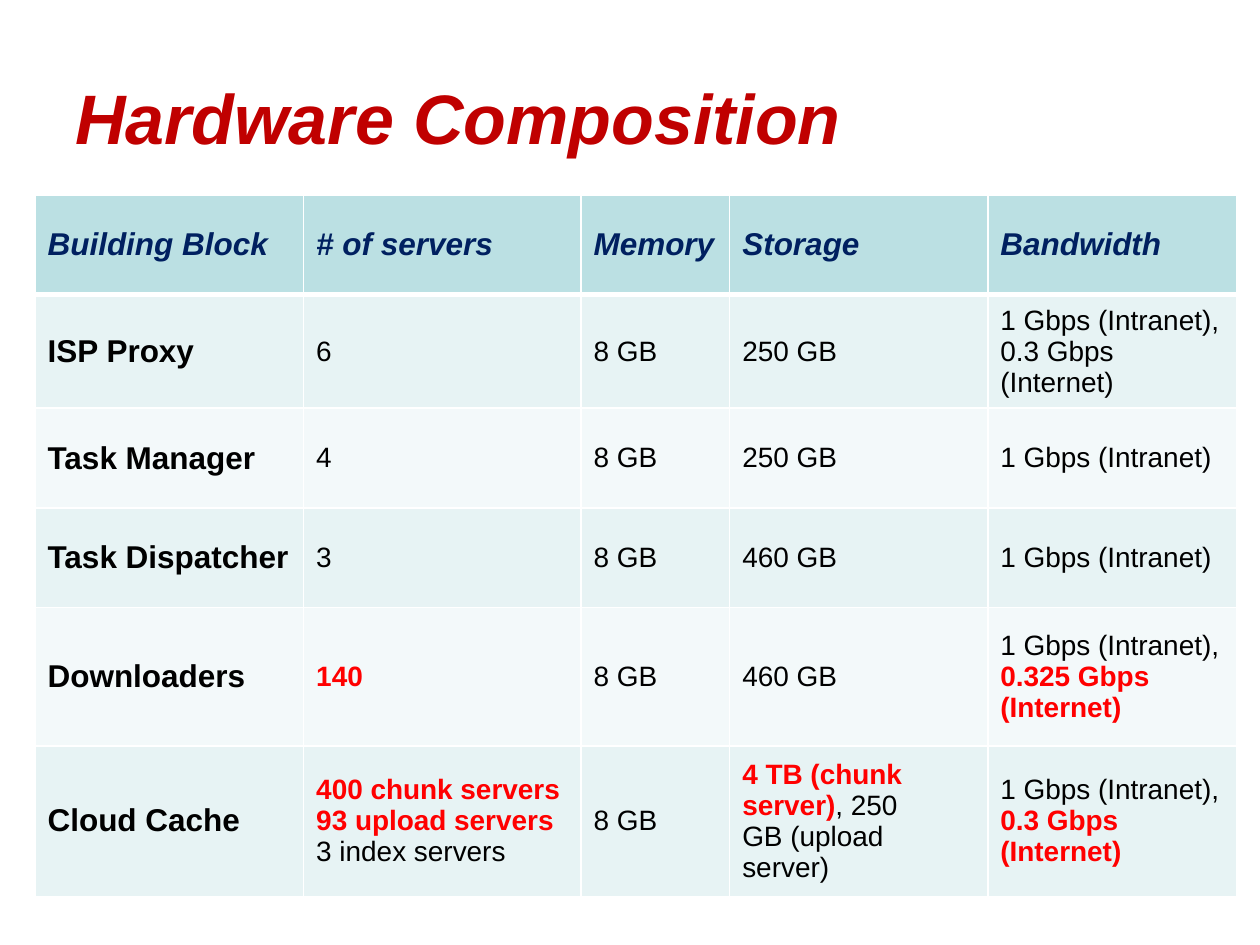
from lxml import etree
from pptx import Presentation
from pptx.dml.color import RGBColor
from pptx.enum.text import MSO_ANCHOR
from pptx.oxml.ns import qn
from pptx.util import Pt

MIDDLE = MSO_ANCHOR.MIDDLE
FONT = "Arial"
WHITE, BLACK, RED = "FFFFFF", "000000", "FF0000"
TITLE_RED, NAVY = "C00000", "002060"
HEADER_FILL, BAND_FILLS = "BBE0E3", ("E7F3F4", "F3F9FA")

COL_WIDTHS = (153.5, 158.5, 85, 147.5, 142)
ROW_HEIGHTS = (57, 61, 57, 57, 79, 86)
HEADERS = ("Building Block", "# of servers", "Memory", "Storage", "Bandwidth")
# Text between bars is highlighted.
ROWS = (
    ("ISP Proxy", "6", "8 GB", "250 GB", "1 Gbps (Intranet), 0.3 Gbps (Internet)"),
    ("Task Manager", "4", "8 GB", "250 GB", "1 Gbps (Intranet)"),
    ("Task Dispatcher", "3", "8 GB", "460 GB", "1 Gbps (Intranet)"),
    ("Downloaders", "|140|", "8 GB", "460 GB",
     "1 Gbps (Intranet), |0.325 Gbps (Internet)|"),
    ("Cloud Cache", "|400 chunk servers|\n|93 upload servers|\n3 index servers",
     "8 GB", "|4 TB (chunk server)|, 250\nGB (upload server)",
     "1 Gbps (Intranet), |0.3 Gbps (Internet)|"),
)


def rgb(color):
    return RGBColor.from_string(color)


def write_text(tf, text, size=16, color=BLACK, bold=False, italic=False):
    tf.word_wrap = True
    for i, line in enumerate(text.split("\n")):
        p = tf.paragraphs[0] if i == 0 else tf.add_paragraph()
        for j, part in enumerate(line.split("|")):
            if not part:
                continue
            marked = j % 2 == 1
            r = p.add_run()
            r.text = part
            r.font.name = FONT
            r.font.size = Pt(size)
            r.font.bold = bold or marked
            r.font.italic = italic
            r.font.color.rgb = rgb(RED if marked else color)


def set_borders(cell, bottom=1):
    tcPr = cell._tc.get_or_add_tcPr()
    widths = {"a:lnL": 1, "a:lnR": 1, "a:lnT": 1, "a:lnB": bottom}
    for i, (tag, width) in enumerate(widths.items()):
        ln = etree.Element(qn(tag), w=str(Pt(width)))
        fill = etree.SubElement(ln, qn("a:solidFill"))
        etree.SubElement(fill, qn("a:srgbClr"), val=WHITE)
        tcPr.insert(i, ln)


def fill_cell(cell, text, fill, bottom=1, **fmt):
    cell.vertical_anchor = MIDDLE
    cell.fill.solid()
    cell.fill.fore_color.rgb = rgb(fill)
    set_borders(cell, bottom)
    write_text(cell.text_frame, text, **fmt)


def add_title(s, text):
    tf = s.shapes.add_textbox(Pt(36), Pt(21.6), Pt(648), Pt(90)).text_frame
    tf.vertical_anchor = MIDDLE
    write_text(tf, text, size=40, color=TITLE_RED, bold=True, italic=True)


def add_hardware_table(s):
    table = s.shapes.add_table(
        len(ROW_HEIGHTS), len(COL_WIDTHS), Pt(20), Pt(111.5),
        Pt(sum(COL_WIDTHS)), Pt(sum(ROW_HEIGHTS))).table
    for col, width in zip(table.columns, COL_WIDTHS):
        col.width = Pt(width)
    for row, height in zip(table.rows, ROW_HEIGHTS):
        row.height = Pt(height)
    for c, text in enumerate(HEADERS):
        fill_cell(table.cell(0, c), text, HEADER_FILL, bottom=3,
                  size=18, color=NAVY, bold=True, italic=True)
    for r, values in enumerate(ROWS):
        for c, text in enumerate(values):
            fill_cell(table.cell(r + 1, c), text, BAND_FILLS[r % 2],
                      size=18 if c == 0 else 16, bold=c == 0)


def main():
    prs = Presentation()
    prs.slide_width, prs.slide_height = Pt(720), Pt(540)
    s = prs.slides.add_slide(prs.slide_layouts[6])
    add_title(s, "Hardware Composition")
    add_hardware_table(s)
    prs.save("out.pptx")


if __name__ == "__main__":
    main()
